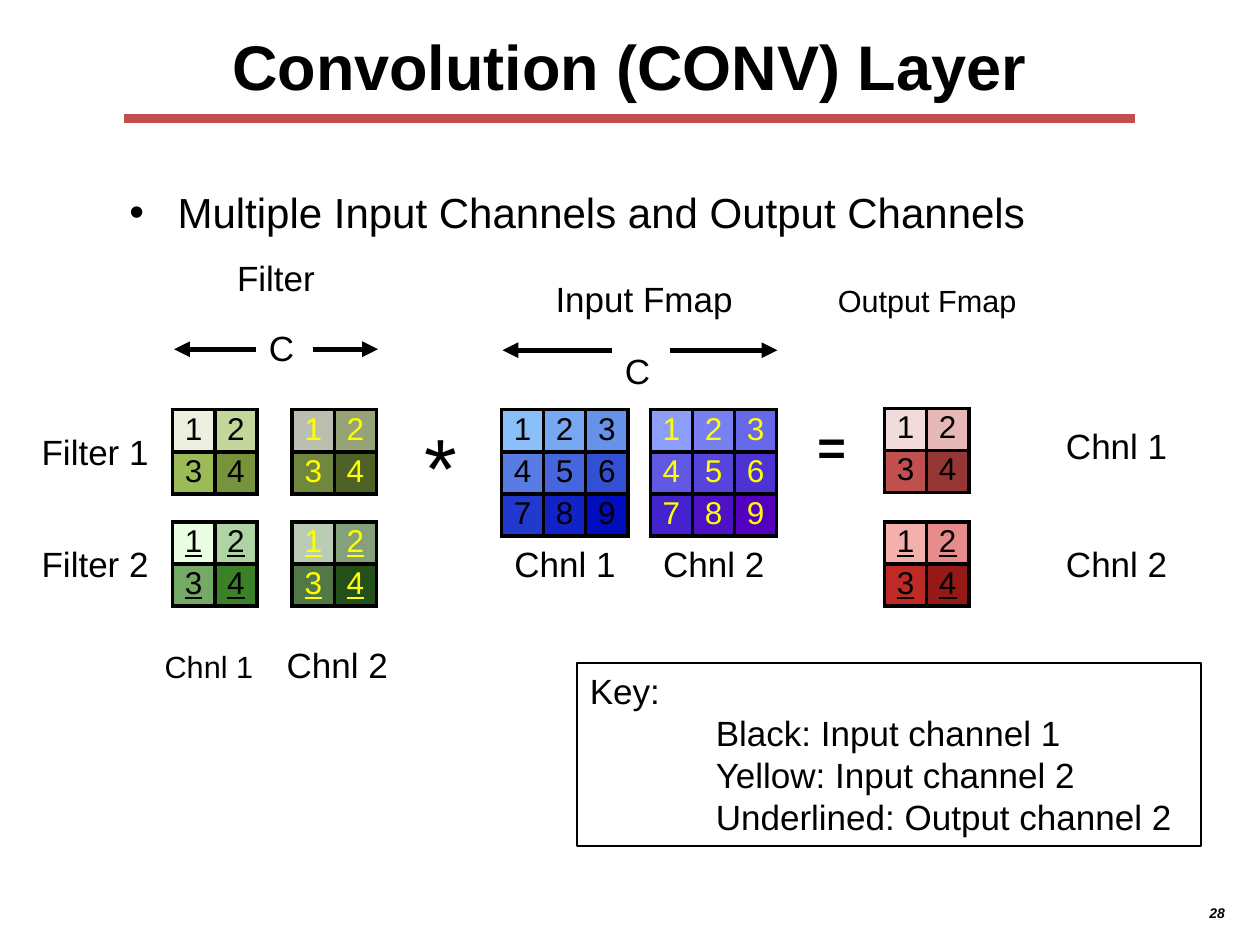
"""Builds a slide on convolution layers with several input and output channels."""
from dataclasses import dataclass
from typing import Any

from lxml.etree import SubElement
from pptx import Presentation
from pptx.dml.color import RGBColor
from pptx.enum.shapes import MSO_CONNECTOR, MSO_SHAPE
from pptx.enum.text import MSO_ANCHOR, PP_ALIGN
from pptx.oxml.ns import qn
from pptx.util import Cm, Pt


def color(value):
    return RGBColor.from_string(value)


@dataclass
class SlideBuilder:
    slide: Any
    font: str = "Arial"
    black: str = "000000"
    yellow: str = "FFFF00"
    cell: float = 0.85

    def style(self, paragraph, size, ink=None, bold=False, italic=False, underline=False):
        font = paragraph.font
        font.name, font.size = self.font, Pt(size)
        font.bold, font.italic, font.underline = bold, italic, underline
        font.color.rgb = color(ink or self.black)

    def text(self, content, left, top, size=20, width=4.5, **style):
        box = self.slide.shapes.add_textbox(Cm(left), Cm(top), Cm(width), Cm(size * 0.045))
        frame = box.text_frame
        frame.word_wrap = True
        frame.margin_left = frame.margin_right = frame.margin_bottom = 0
        frame.margin_top = Cm(0.03)
        paragraph = frame.paragraphs[0]
        paragraph.text = content
        paragraph.space_before = Pt(1)
        self.style(paragraph, size, **style)
        return paragraph

    def bullet(self, content, left, top, size, width):
        paragraph = self.text(content, left, top, size, width)
        properties = paragraph._p.get_or_add_pPr()
        properties.set("marL", str(Cm(0.99)))
        properties.set("indent", str(-Cm(0.97)))
        defaults = properties.find(qn("a:defRPr"))
        for tag, name, value in (("a:buFont", "typeface", self.font), ("a:buChar", "char", "•")):
            defaults.addprevious(properties.makeelement(qn(tag), {name: value}))

    def line(self, start, end, y, width, ink, arrow=False):
        connector = self.slide.shapes.add_connector(
            MSO_CONNECTOR.STRAIGHT, Cm(start), Cm(y), Cm(end), Cm(y))
        connector.line.width = Pt(width)
        connector.line.color.rgb = color(ink)
        if arrow:
            SubElement(connector.line._get_or_add_ln(), qn("a:tailEnd")).set("type", "triangle")
        SubElement(connector.element.spPr, qn("a:effectLst"))

    def span(self, left, gap_left, gap_right, right, y):
        self.line(gap_left, left, y, 3, self.black, arrow=True)
        self.line(gap_right, right, y, 3, self.black, arrow=True)

    def border(self, cell):
        properties = cell._tc.get_or_add_tcPr()
        for index, side in enumerate(("lnL", "lnR", "lnT", "lnB")):
            edge = properties.makeelement(qn(f"a:{side}"), {"w": str(Pt(2.25))})
            fill = SubElement(edge, qn("a:solidFill"))
            SubElement(fill, qn("a:srgbClr")).set("val", self.black)
            properties.insert(index, edge)

    def matrix(self, left, top, fills, **style):
        fills = fills.split()
        count = int(len(fills) ** 0.5)
        side = Cm(self.cell * count)
        table = self.slide.shapes.add_table(count, count, Cm(left), Cm(top), side, side).table
        for index, fill in enumerate(fills):
            cell = table.cell(*divmod(index, count))
            cell.margin_left = cell.margin_right = cell.margin_bottom = 0
            cell.margin_top = Cm(0.04)
            cell.fill.solid()
            cell.fill.fore_color.rgb = color(fill)
            paragraph = cell.text_frame.paragraphs[0]
            paragraph.text = str(index + 1)
            paragraph.alignment = PP_ALIGN.CENTER
            paragraph.space_before = Pt(1.2)
            self.style(paragraph, 18, **style)
            self.border(cell)

    def key(self, heading, entries, left, top, width, height):
        shape = self.slide.shapes.add_shape(
            MSO_SHAPE.RECTANGLE, Cm(left), Cm(top), Cm(width), Cm(height))
        shape.shadow.inherit = False
        shape.fill.background()
        shape.line.color.rgb = color(self.black)
        shape.line.width = Pt(1)
        frame = shape.text_frame
        frame.word_wrap = True
        frame.vertical_anchor = MSO_ANCHOR.TOP
        frame.margin_left, frame.margin_top, frame.margin_right = Cm(0.25), Cm(0.12), 0
        frame.text = "\n".join((heading, *entries))
        for index, paragraph in enumerate(frame.paragraphs):
            paragraph.alignment = PP_ALIGN.LEFT
            paragraph.line_spacing = Pt(24)
            self.style(paragraph, 20)
            if index:
                paragraph._p.get_or_add_pPr().set("marL", str(Cm(2.54)))
        frame.paragraphs[0].space_before = Pt(2.7)


def main():
    presentation = Presentation()
    presentation.slide_width, presentation.slide_height = Cm(25.4), Cm(19.05)
    builder = SlideBuilder(presentation.slides.add_slide(presentation.slide_layouts[6]))
    yellow = builder.yellow

    builder.line(2.51, 22.89, 2.39, 5.5, "C0504D")
    builder.text("Convolution (CONV) Layer", 4.68, 0.53, 36, 16.5, bold=True)
    builder.bullet("Multiple Input Channels and Output Channels", 2.59, 3.73, 24, 18.5)

    upper, lower = 8.26, 10.52
    builder.matrix(3.48, upper, "EBF1DE C3D69B 9BBB59 77933C")
    builder.matrix(5.89, upper, "BBBFB0 95A376 708740 4E6127", ink=yellow)
    builder.matrix(3.48, lower, "E9FEE2 AED4A4 74AA66 3A8128", underline=True)
    builder.matrix(5.89, lower, "BBCCB6 84A17C 527848 234F18", ink=yellow, underline=True)
    builder.matrix(10.11, upper, "8ABFF9 78A8F1 6792EA 587CE3 4566DC 334FD4 2239CD 1123C6 000DBF")
    builder.matrix(13.11, upper, "8C9DFA 7880F1 6767EA 6158E3 5644DC 4D33D4 4422CD 4D11C6 5300BF",
                   ink=yellow)
    builder.matrix(17.83, upper - 0.03, "F2DCDB E6B9B8 C0504D 953735")
    builder.matrix(17.83, lower, "F3B0AC E68C8A C02A26 951A17", underline=True)

    builder.span(3.51, 5.16, 6.3, 7.62, 7.04)
    builder.span(10.13, 12.34, 13.51, 15.67, 7.06)

    labels = (
        ("Filter", 4.78, 5.15), ("C", 5.42, 6.55, 20, 0.6),
        ("Input Fmap", 11.2, 5.56), ("C", 12.6, 7.01, 20, 0.6),
        ("Filter 1", 0.84, 8.64, 20, 2.3), ("Filter 2", 0.84, 10.9, 20, 2.3),
        ("Chnl 1", 10.37, 10.9, 20, 2.3), ("Chnl 2", 13.37, 10.9, 20, 2.3),
        ("Chnl 1", 21.49, 8.53, 20, 2.3), ("Chnl 2", 21.49, 10.9, 20, 2.3),
        ("Chnl 2", 5.78, 12.94, 20, 2.3),
        ("Chnl 1", 3.32, 13.04, 17.5, 2.3), ("Output Fmap", 16.89, 5.66, 17.5),
        ("*", 8.56, 8.33, 48, 0.9),
    )
    for label in labels:
        builder.text(*label)
    builder.text("=", 16.48, 8.36, 28, 0.7, bold=True)

    entries = ("Black: Input channel 1", "Yellow: Input channel 2", "Underlined: Output channel 2")
    builder.key("Key:", entries, 11.64, 13.37, 12.57, 3.68)
    builder.text("28", 24.38, 18.2, 8, 0.6, bold=True, italic=True)
    presentation.save("out.pptx")


if __name__ == "__main__":
    main()
